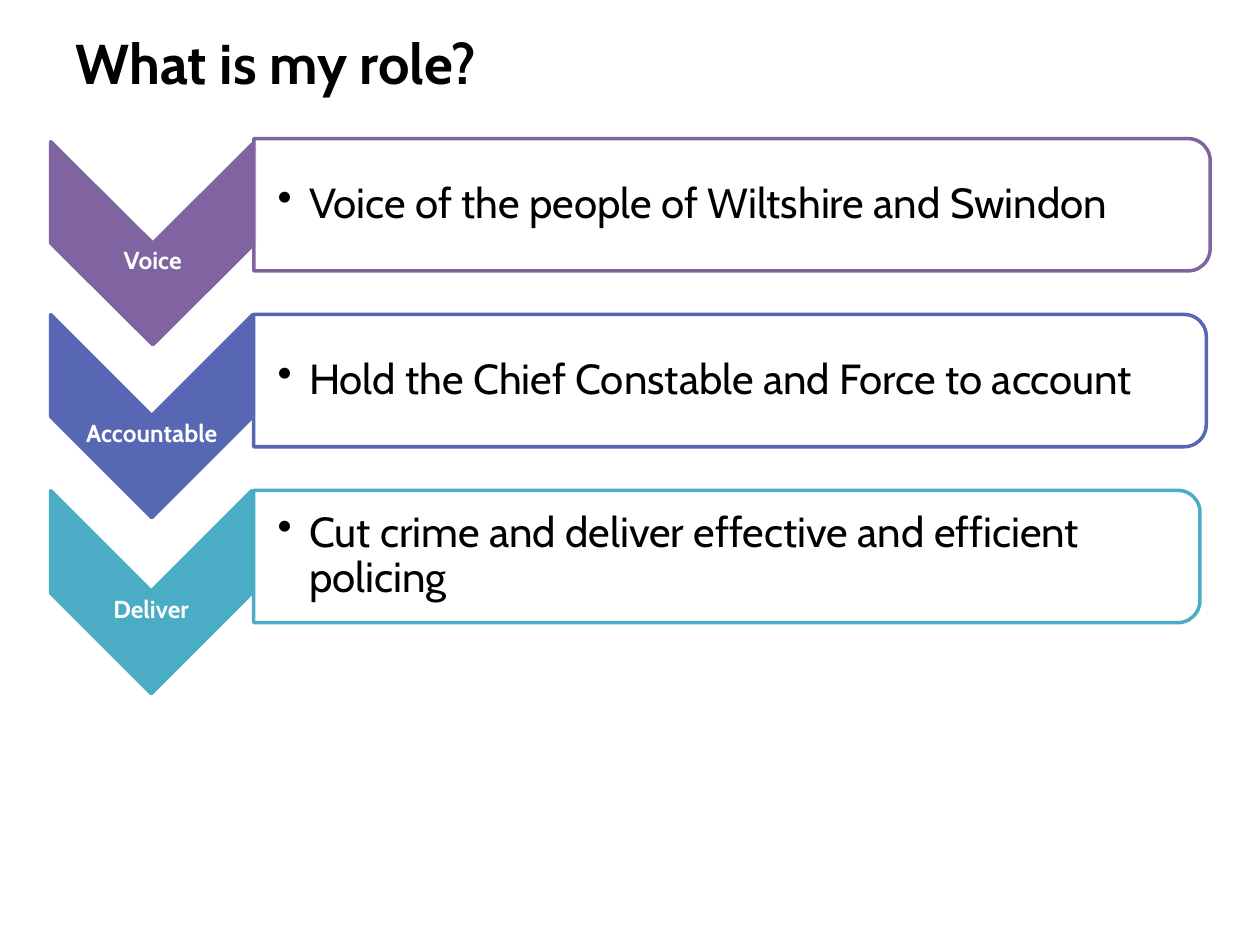
"""Build the role slide: three chevrons, each leading to a bulleted panel."""
import pptx
import pptx.util
import pptx.dml.color
import pptx.enum.shapes
import pptx.enum.text
import pptx.oxml
import pptx.oxml.ns

Pt = pptx.util.Pt
RGBColor = pptx.dml.color.RGBColor
SHAPES = pptx.enum.shapes.MSO_SHAPE
ALIGN = pptx.enum.text.PP_ALIGN
MIDDLE = pptx.enum.text.MSO_ANCHOR.MIDDLE

BLACK = RGBColor(0x00, 0x00, 0x00)
WHITE = RGBColor(0xFF, 0xFF, 0xFF)
PURPLE = RGBColor(0x80, 0x64, 0xA2)
BLUE = RGBColor(0x57, 0x67, 0xB4)
TEAL = RGBColor(0x4B, 0xAC, 0xC6)
FONT = "Cabin"
NAMESPACE = 'xmlns:a="http://schemas.openxmlformats.org/drawingml/2006/main"'


def add_turned_shape(kind, left, middle, width, height, fill, line):
    """Add a shape turned a quarter right that covers the given area."""
    shape = slide.shapes.add_shape(
        kind, Pt(left + (width - height) / 2), Pt(middle - width / 2), Pt(height), Pt(width))
    shape.rotation = 90
    shape.shadow.inherit = False
    shape.fill.solid()
    shape.fill.fore_color.rgb = fill
    shape.line.color.rgb = line
    shape.line.width = Pt(2)
    return shape


def add_label(text, left, middle, width, height, size, color, inset):
    """Add a vertically centred text box and return its paragraph."""
    box = slide.shapes.add_textbox(Pt(left), Pt(middle - height / 2), Pt(width), Pt(height))
    frame = box.text_frame
    frame.word_wrap = True
    frame.vertical_anchor = MIDDLE
    frame.margin_left = Pt(inset)
    frame.margin_right = frame.margin_top = frame.margin_bottom = Pt(1)
    para = frame.paragraphs[0]
    para.text = text
    para.line_spacing = 0.9
    font = para.runs[0].font
    font.name, font.size, font.color.rgb = FONT, Pt(size), color
    return para


deck = pptx.Presentation()
deck.slide_width, deck.slide_height = Pt(720), Pt(540)
slide = deck.slides.add_slide(deck.slide_layouts[5])

title = slide.shapes.title
title.left, title.top, title.width, title.height = Pt(36), Pt(6.5), Pt(648), Pt(57.6)
title.text_frame.text = "What is my role?"
title.text_frame.vertical_anchor = MIDDLE
heading = title.text_frame.paragraphs[0]
heading.alignment = ALIGN.LEFT
heading_font = heading.runs[0].font
heading_font.name, heading_font.size, heading_font.bold = FONT, Pt(32), True
heading_font.color.rgb = BLACK

roles = [
    ("Voice", "Voice of the people of Wiltshire and Swindon", PURPLE, 139, 116.6, 546.5),
    ("Accountable", "Hold the Chief Constable and Force to account", BLUE, 237.8, 115.4, 544.3),
    ("Deliver", "Cut crime and deliver effective and efficient policing", TEAL, 338.4, 114.8, 540.7),
]
for index, (name, duty, color, chevron_middle, chevron_width, panel_width) in enumerate(roles):
    panel_middle = 117 + 100.5 * index
    add_turned_shape(SHAPES.CHEVRON, 29, chevron_middle, chevron_width, 116, color, color)
    label = add_label(name, 29, chevron_middle + 10.5, chevron_width, 20, 14, WHITE, 1)
    label.alignment = ALIGN.CENTER
    label.runs[0].font.bold = True

    panel = add_turned_shape(
        SHAPES.ROUND_2_SAME_RECTANGLE, 145, panel_middle, panel_width, 75.6, WHITE, color)
    panel_color = panel.fill._xPr.find(pptx.oxml.ns.qn("a:solidFill"))[0]
    panel_color.append(pptx.oxml.parse_xml(f'<a:alpha {NAMESPACE} val="90000"/>'))

    bullet = add_label(duty, 145, panel_middle, panel_width - 3.5, 68, 24, BLACK, 13.7)
    properties = bullet._p.get_or_add_pPr()
    properties.set("marL", str(Pt(18)))
    properties.set("indent", str(-Pt(18)))
    properties.append(pptx.oxml.parse_xml(f'<a:buChar {NAMESPACE} char="•"/>'))

deck.save("out.pptx")
